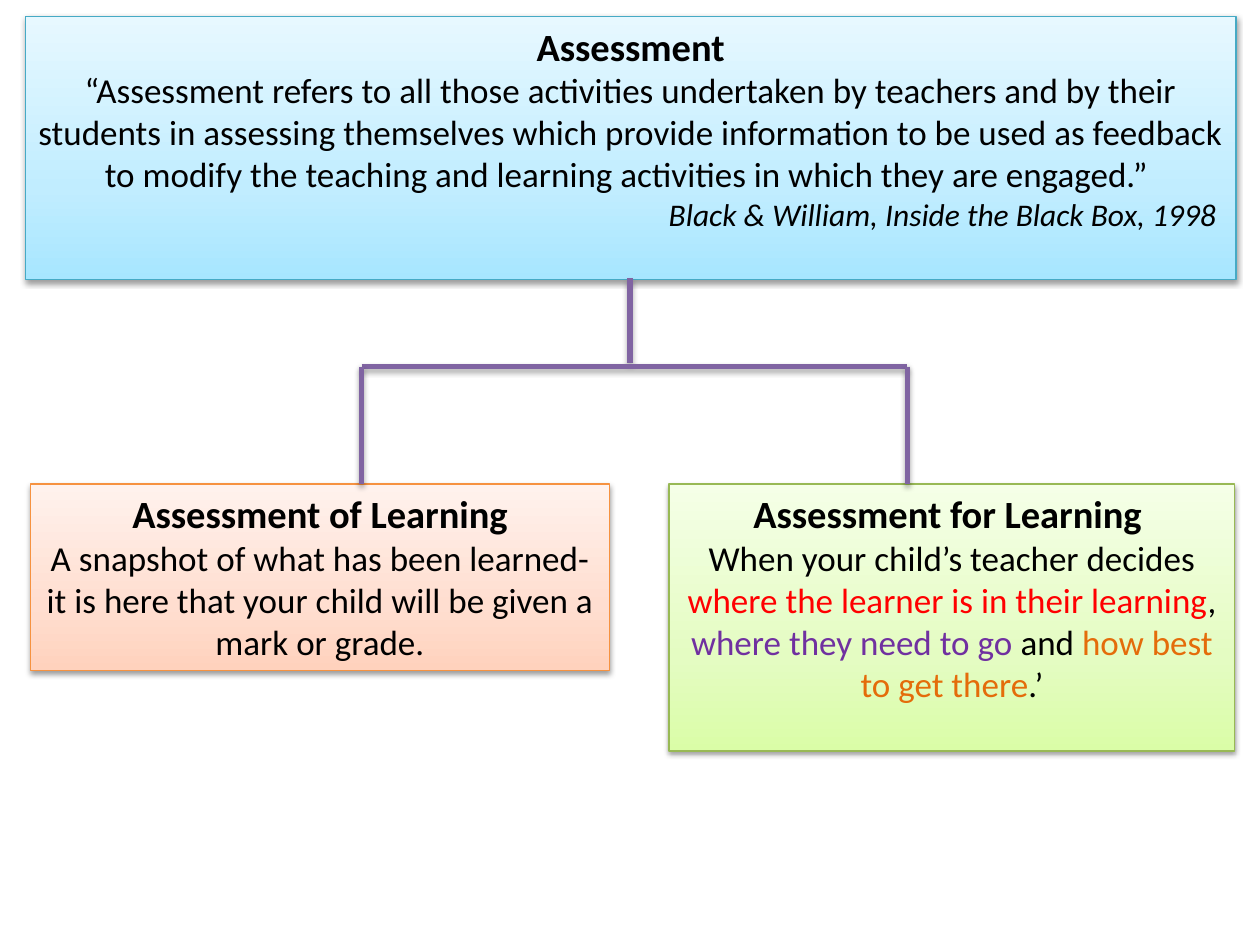
import copy

import lxml.etree
import pptx
import pptx.dml.color
import pptx.enum.shapes
import pptx.enum.text
import pptx.oxml
import pptx.oxml.ns
import pptx.util

Inches = pptx.util.Inches
ALIGN = pptx.enum.text.PP_ALIGN
HEADING = {"size": pptx.util.Pt(22), "bold": True}
BODY = {"size": pptx.util.Pt(20)}
SOURCE = {"size": pptx.util.Pt(18), "italic": True}


def rgb(value):
    return pptx.dml.color.RGBColor.from_string(value)


class AssessmentSlide:
    """Holds the shared style and the slide on which the chart is drawn."""

    font = "Calibri"
    text_color = "000000"
    branch_color = "8064A2"

    def __init__(self, presentation):
        self.shapes = presentation.slides.add_slide(presentation.slide_layouts[6]).shapes

    def shadow(self, effects, opacity, distance):
        namespace = pptx.oxml.ns.nsdecls("a")
        effects.append(pptx.oxml.parse_xml(
            f'<a:outerShdw {namespace} blurRad="40000" dist="{distance}" dir="5400000" '
            f'rotWithShape="0"><a:srgbClr val="000000"><a:alpha val="{opacity}"/>'
            '</a:srgbClr></a:outerShdw>'))

    def gradient(self, shape, colors):
        shape.fill.gradient()
        shape.fill.gradient_angle = 90
        first_stop = shape._element.spPr.xpath(".//a:gs")[0]
        first_stop.addnext(copy.deepcopy(first_stop))
        for stop, color, position in zip(shape.fill.gradient_stops, colors, (0, 0.35, 1)):
            stop.color.rgb = rgb(color)
            stop.position = position

    def paragraph(self, paragraph, runs, style, alignment=ALIGN.CENTER):
        paragraph.alignment = alignment
        for text, color in runs:
            run = paragraph.add_run()
            run.text = text
            run.font.color.rgb = rgb(color or self.text_color)
            for name, value in {"name": self.font, **style}.items():
                setattr(run.font, name, value)

    def box(self, bounds, colors, border, paragraphs):
        shape = self.shapes.add_shape(
            pptx.enum.shapes.MSO_SHAPE.RECTANGLE, *map(Inches, bounds))
        self.gradient(shape, colors)
        shape.line.color.rgb = rgb(border)
        shape.line.width = pptx.util.Pt(0.75)
        shape.shadow.inherit = False
        self.shadow(shape._element.spPr.xpath("a:effectLst")[0], 38000, 20000)
        frame = shape.text_frame
        frame.word_wrap = True
        frame.vertical_anchor = pptx.enum.text.MSO_ANCHOR.TOP
        for index, content in enumerate(paragraphs):
            self.paragraph(frame.add_paragraph() if index else frame.paragraphs[0], *content)

    def branch(self, *ends):
        connector = self.shapes.add_connector(
            pptx.enum.shapes.MSO_CONNECTOR.STRAIGHT, *map(Inches, ends))
        connector.line.color.rgb = rgb(self.branch_color)
        connector.line.width = pptx.util.Pt(3)
        effects = lxml.etree.SubElement(
            connector._element.spPr, pptx.oxml.ns.qn("a:effectLst"))
        self.shadow(effects, 35000, 23000)


def main():
    presentation = pptx.Presentation()
    presentation.slide_width, presentation.slide_height = Inches(10), Inches(7.5)
    slide = AssessmentSlide(presentation)
    children_top, fork, left, right = 3.84, 2.91, 2.87, 7.2

    slide.box((0.2, 0.13, 9.61, 2.09), ("A7E6FF", "C1EDFF", "E7F8FF"), "46AAC5", [
        ([("Assessment", None)], HEADING),
        ([("“Assessment refers to all those activities undertaken by teachers and by "
           "their students in assessing themselves which provide information to be used "
           "as feedback to modify the teaching and learning activities in which they "
           "are engaged.” ", None)], BODY),
        ([("Black & William, Inside the Black Box, 1998 ", None)], SOURCE, ALIGN.RIGHT),
    ])
    slide.box((0.24, children_top, 4.6, 1.48), ("FFD2BD", "FFDED0", "FFF2ED"), "F69240", [
        ([("Assessment of Learning", None)], HEADING),
        ([("A snapshot of what has been learned- it is here that your child will be "
           "given a mark or grade.", None)], BODY),
    ])
    slide.box((5.31, children_top, 4.49, 2.12), ("DAFDA7", "E4FCC2", "F5FFE7"), "98B955", [
        ([("Assessment for Learning ", None)], HEADING),
        ([("When your child’s teacher decides ", None),
          ("where the learner is in their learning", "FF0000"),
          (", ", None),
          ("where they need to go ", "7030A0"),
          ("and ", None),
          ("how best to get there", "E46C0A"),
          (".’", None)], BODY),
    ])

    slide.branch(5, 2.21, 5, 2.88)
    slide.branch(left, fork, right, fork)
    for column in (left, right):
        slide.branch(column, fork, column, children_top)
    presentation.save("out.pptx")


if __name__ == "__main__":
    main()
